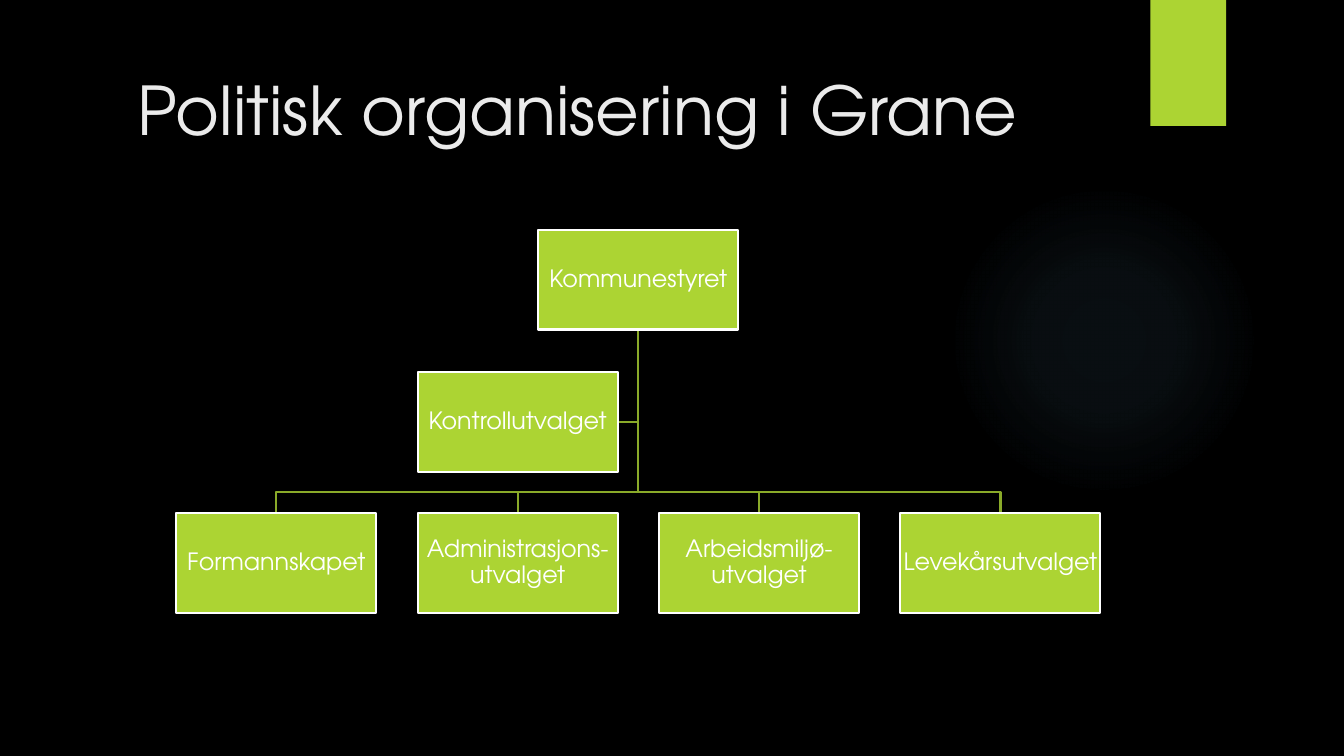
import dataclasses

import pptx
import pptx.dml.color
import pptx.enum.shapes
import pptx.enum.text
import pptx.oxml
import pptx.shapes.autoshape
import pptx.slide
import pptx.text.text
import pptx.util

Pt = pptx.util.Pt
RGB = pptx.dml.color.RGBColor
SHAPE = pptx.enum.shapes.MSO_SHAPE
ALIGN = pptx.enum.text.PP_ALIGN
ANCHOR = pptx.enum.text.MSO_ANCHOR

BLACK = RGB(0x00, 0x00, 0x00)
WHITE = RGB(0xFF, 0xFF, 0xFF)
PALE = RGB(0xEB, 0xEB, 0xEB)
LIME = RGB(0xAC, 0xD4, 0x33)
OLIVE = RGB(0x8A, 0xAA, 0x29)
SKY = RGB(0x7A, 0xC4, 0xF0)
FONT = "TeX Gyre Adventor"

WIDE, HIGH = 142.8, 71.4
LEFT, STEP = 126, 172.4
TOP, MID, LOW = 164, 265.5, 366.5
TRUNK = LEFT + 1.5 * STEP + WIDE / 2
BAR = LOW - 15


@dataclasses.dataclass(frozen=True)
class Unit:
    name: str
    col: float
    top: float

    @property
    def left(self) -> float:
        return LEFT + self.col * STEP

    @property
    def route(self) -> list[tuple[float, float]]:
        """Corner points of the line down from the council."""
        start = (TRUNK, TOP + HIGH)
        if self.top == MID:
            level = MID + HIGH / 2
            return [start, (TRUNK, level), (self.left + WIDE, level)]
        mid = self.left + WIDE / 2
        return [start, (TRUNK, BAR), (mid, BAR), (mid, LOW)]


HEAD = Unit("Kommunestyret", 1.5, TOP)
BOARDS = [
    Unit(name, col, LOW)
    for col, name in enumerate(
        ["Formannskapet", "Administrasjons-utvalget",
         "Arbeidsmiljø-utvalget", "Levekårsutvalget"]
    )
]
AUDIT = Unit("Kontrollutvalget", 1, MID)


def write(
    frame: pptx.text.text.TextFrame, text: str, *, size: float, color: RGB,
    align: ALIGN, anchor: ANCHOR, inset: tuple[float, float], space: float = 1,
) -> None:
    frame.word_wrap = True
    frame.auto_size = pptx.enum.text.MSO_AUTO_SIZE.NONE
    frame.vertical_anchor = anchor
    frame.margin_left = frame.margin_right = Pt(inset[0])
    frame.margin_top = frame.margin_bottom = Pt(inset[1])
    para = frame.paragraphs[0]
    para.alignment = align
    para.line_spacing = space
    run = para.add_run()
    run.text = text
    run.font.name = FONT
    run.font.size = Pt(size)
    run.font.color.rgb = color


def block(
    slide: pptx.slide.Slide, kind: SHAPE, left: float, top: float,
    wide: float, high: float, fill: RGB,
) -> pptx.shapes.autoshape.Shape:
    shape = slide.shapes.add_shape(kind, Pt(left), Pt(top), Pt(wide), Pt(high))
    shape.shadow.inherit = False
    shape.fill.solid()
    shape.fill.fore_color.rgb = fill
    shape.line.fill.background()
    return shape


def glow(slide: pptx.slide.Slide) -> None:
    """Add the faint round light that fades towards its rim."""
    orb = block(slide, SHAPE.OVAL, 677.5, 131.8, 221.8, 221.8, SKY)
    stops = "".join(
        f'<a:gs pos="{pos * 1000}"><a:srgbClr val="{SKY}">'
        f'<a:alpha val="{alpha * 1000}"/></a:srgbClr></a:gs>'
        for pos, alpha in [(0, 7), (36, 6), (69, 0), (100, 0)]
    )
    grad = pptx.oxml.parse_xml(
        '<a:gradFill xmlns:a="http://schemas.openxmlformats.org/drawingml/2006/main">'
        f'<a:gsLst>{stops}</a:gsLst><a:path path="circle">'
        '<a:fillToRect l="50000" t="50000" r="50000" b="50000"/></a:path></a:gradFill>'
    )
    props = orb.element.spPr
    props.replace(props.find("{*}solidFill"), grad)


def link(slide: pptx.slide.Slide, unit: Unit) -> None:
    start, *rest = [(Pt(x), Pt(y)) for x, y in unit.route]
    pen = slide.shapes.build_freeform(*start)
    pen.add_line_segments(rest, close=False)
    line = pen.convert_to_shape()
    line.shadow.inherit = False
    line.fill.background()
    line.line.color.rgb = OLIVE
    line.line.width = Pt(1.5)


def card(slide: pptx.slide.Slide, unit: Unit) -> None:
    box = block(slide, SHAPE.RECTANGLE, unit.left, unit.top, WIDE, HIGH, LIME)
    box.line.color.rgb = WHITE
    box.line.width = Pt(1.5)
    write(box.text_frame, unit.name, size=17, color=WHITE, align=ALIGN.CENTER,
          anchor=ANCHOR.MIDDLE, inset=(0.8, 0.8), space=0.9)


def main() -> None:
    deck = pptx.Presentation()
    deck.slide_width, deck.slide_height = Pt(960), Pt(540)
    slide = deck.slides.add_slide(deck.slide_layouts[5])
    slide.background.fill.solid()
    slide.background.fill.fore_color.rgb = BLACK

    title = slide.shapes.title
    title.left, title.top = Pt(90.7), Pt(45.4)
    title.width, title.height = Pt(694.8), Pt(84.2)
    write(title.text_frame, "Politisk organisering i Grane", size=48, color=PALE,
          align=ALIGN.LEFT, anchor=ANCHOR.TOP, inset=(7.2, 3.6))

    glow(slide)
    block(slide, SHAPE.RECTANGLE, 821.8, 0, 54, 90, LIME)
    for unit in [AUDIT, *reversed(BOARDS)]:
        link(slide, unit)
    for unit in [HEAD, *BOARDS, AUDIT]:
        card(slide, unit)
    deck.save("out.pptx")


if __name__ == "__main__":
    main()
